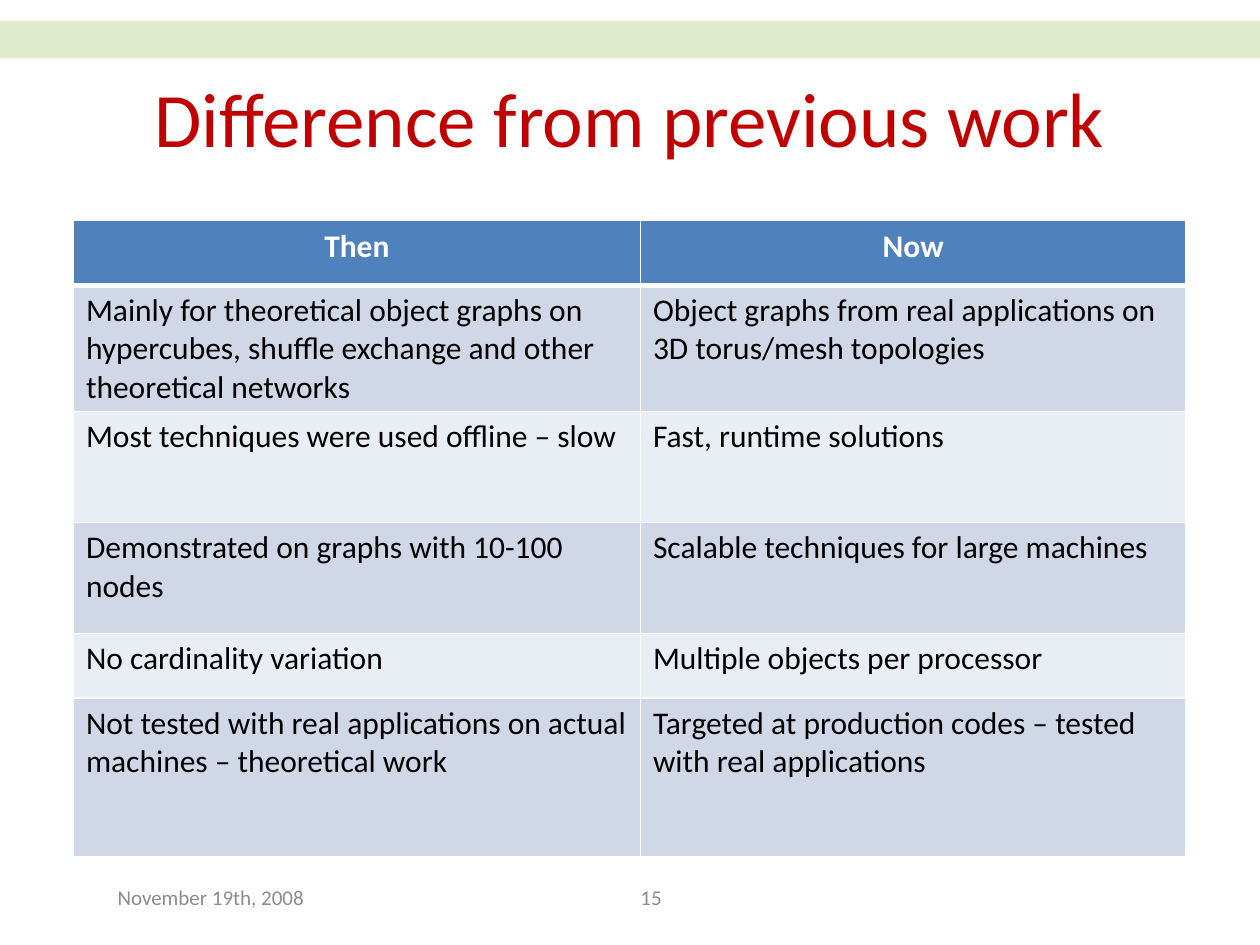
from lxml.etree import SubElement
from pptx import Presentation
from pptx.dml.color import RGBColor
from pptx.enum.shapes import MSO_SHAPE as SHAPE
from pptx.enum.text import MSO_ANCHOR as ANCHOR, PP_ALIGN as ALIGN
from pptx.oxml import parse_xml
from pptx.oxml.ns import nsdecls, qn
from pptx.util import Cm, Pt


def color(hex_value):
    return RGBColor.from_string(hex_value)


def write(tf, text, align, size, hex_value, bold=False):
    p = tf.paragraphs[0]
    p.alignment = align
    r = p.add_run()
    r.text = text
    fmt = {"name": "Calibri", "size": Pt(size), "bold": bold}
    for key, value in fmt.items():
        setattr(r.font, key, value)
    r.font.color.rgb = color(hex_value)


prs = Presentation()
prs.slide_width, prs.slide_height = Cm(25.4), Cm(19.05)
s = prs.slides.add_slide(prs.slide_layouts[6])

# Title, date and slide number
texts = [
    ("Difference from previous work", 1.27, 0.76, 22.86, 3.18, ALIGN.CENTER, 44, "C00000"),
    ("November 19th, 2008", 2.12, 17.58, 5.93, 1.02, ALIGN.LEFT, 12, "8C8C8C"),
    ("15", 10.16, 17.58, 5.93, 1.02, ALIGN.CENTER, 12, "8C8C8C"),
]
for text, x, y, w, h, align, size, hex_value in texts:
    tf = s.shapes.add_textbox(Cm(x), Cm(y), Cm(w), Cm(h)).text_frame
    tf.word_wrap = True
    tf.vertical_anchor = ANCHOR.MIDDLE
    write(tf, text, align, size, hex_value)

# Comparison table
rows = [
    ("Then", "Now", 1.3),
    ("Mainly for theoretical object graphs on hypercubes, shuffle exchange and other theoretical networks",
     "Object graphs from real applications on 3D torus/mesh topologies", 2.24),
    ("Most techniques were used offline – slow", "Fast, runtime solutions", 2.24),
    ("Demonstrated on graphs with 10-100 nodes", "Scalable techniques for large machines", 2.24),
    ("No cardinality variation", "Multiple objects per processor", 1.3),
    ("Not tested with real applications on actual machines – theoretical work",
     "Targeted at production codes – tested with real applications", 3.2),
]
table = s.shapes.add_table(len(rows), 2, Cm(1.48), Cm(4.45), Cm(22.43), Cm(12.52)).table
for col, width in zip(table.columns, (11.43, 11)):
    col.width = Cm(width)

for i, (then, now, height) in enumerate(rows):
    table.rows[i].height = Cm(height)
    header = i == 0
    fill = "4F81BD" if header else ("E9EDF4", "D0D8E8")[i % 2]
    for j, text in enumerate((then, now)):
        cell = table.cell(i, j)
        write(cell.text_frame, text, ALIGN.CENTER if header else ALIGN.LEFT, 18,
              "FFFFFF" if header else "000000", header)
        # White borders, thicker under the header
        widths = {"lnL": 1, "lnR": 1, "lnT": 3 if i == 1 else 1, "lnB": 3 if header else 1}
        tcPr = cell._tc.get_or_add_tcPr()
        for side, width in widths.items():
            tcPr.append(parse_xml(
                f'<a:{side} {nsdecls("a")} w="{Pt(width)}"><a:solidFill>'
                f'<a:srgbClr val="FFFFFF"/></a:solidFill></a:{side}>'))
        cell.fill.solid()
        cell.fill.fore_color.rgb = color(fill)

# Half-transparent band across the top
sp = s.shapes.add_shape(SHAPE.RECTANGLE, 0, Cm(0.42), prs.slide_width, Cm(0.76))
sp.shadow.inherit = False
sp.line.fill.background()
sp.fill.solid()
sp.fill.fore_color.rgb = color("C3D69B")
SubElement(sp._element.spPr.find(".//" + qn("a:srgbClr")), qn("a:alpha"), val="50000")

prs.save("out.pptx")
